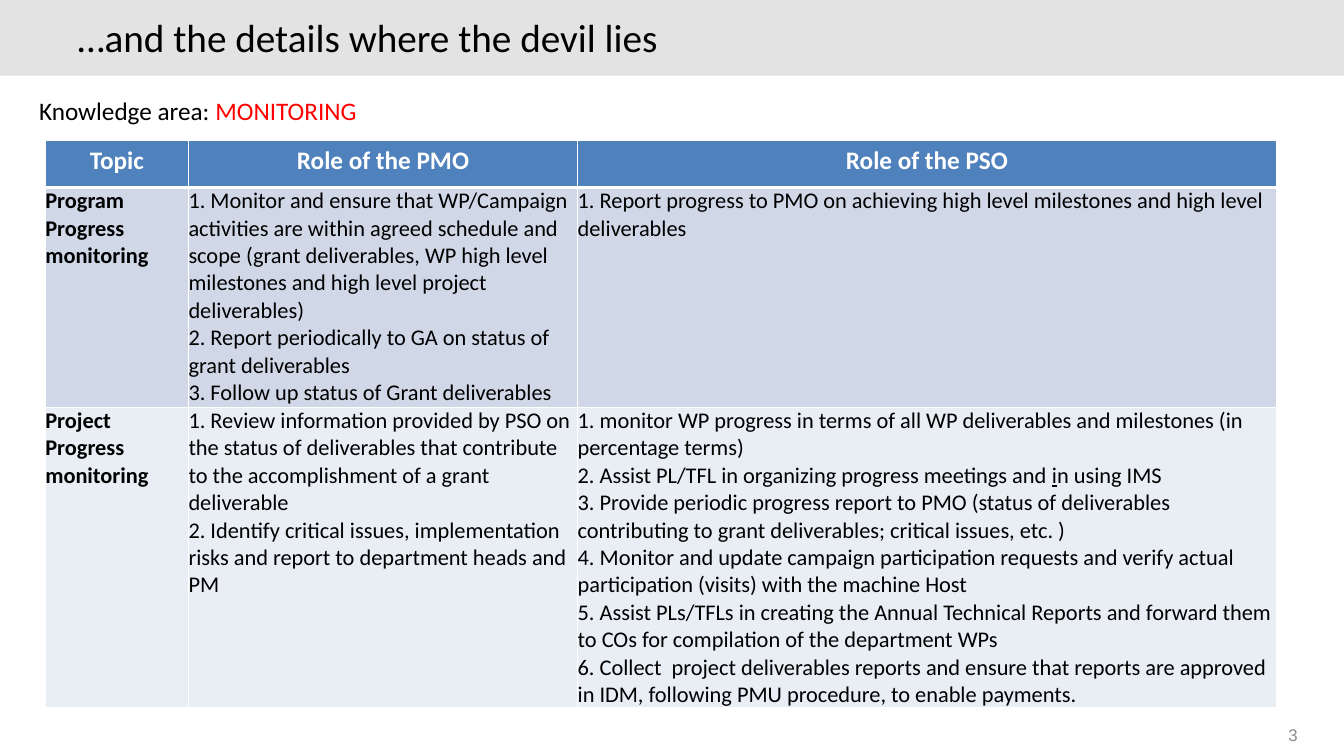
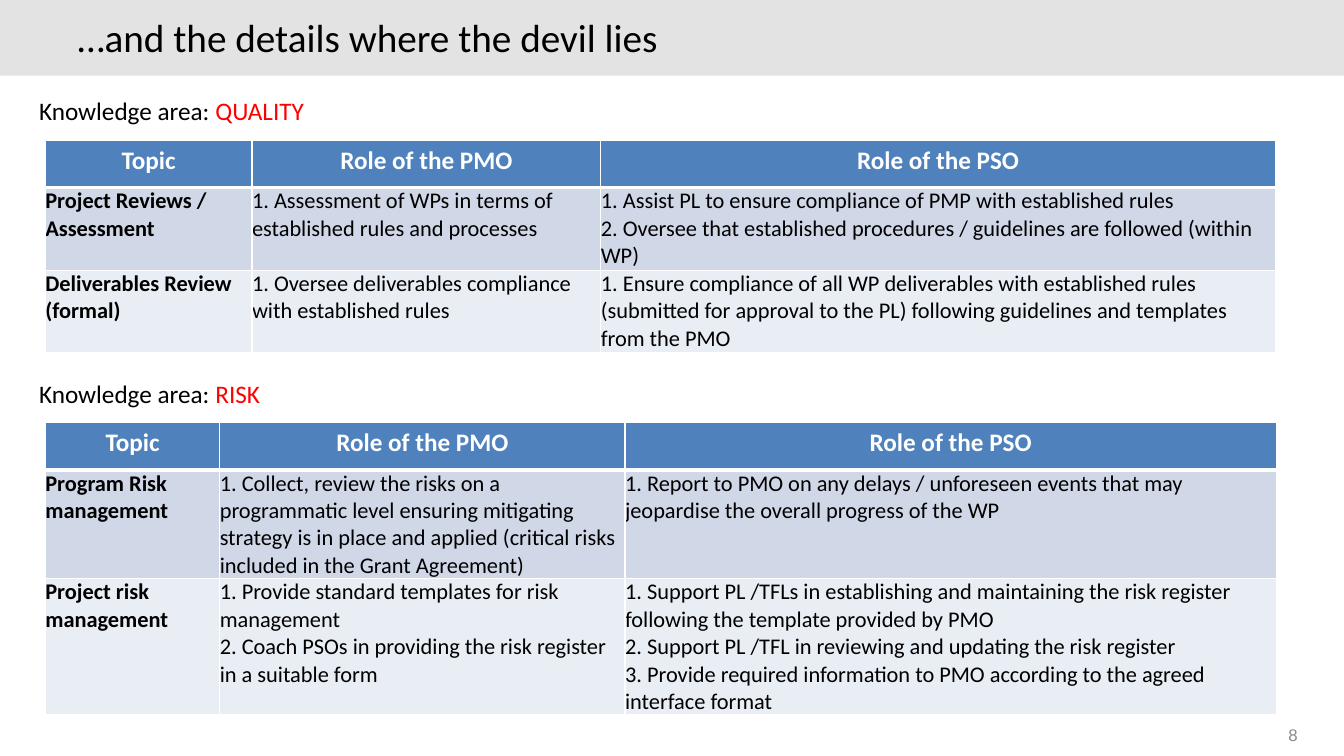
from lxml import etree
from pptx import Presentation
from pptx.dml.color import RGBColor
from pptx.enum import shapes, text
from pptx.oxml import ns
from pptx.util import Inches, Pt

BLACK = RGBColor(0x00, 0x00, 0x00)
WHITE = RGBColor(0xFF, 0xFF, 0xFF)
RED = RGBColor(0xFF, 0x00, 0x00)
NUMBER_GREY = RGBColor(0x8C, 0x8C, 0x8C)
BAND_GREY = RGBColor(0xE3, 0xE3, 0xE3)
HEADER_BLUE = RGBColor(0x4F, 0x81, 0xBD)
ROW_FILLS = (RGBColor(0xD0, 0xD8, 0xE8), RGBColor(0xE9, 0xED, 0xF4))

SLIDE_WIDTH = Inches(13.33)
TITLE = "…and the details where the devil lies"
HEADINGS = ("Topic", "Role of the PMO", "Role of the PSO")
HEADER_HEIGHT = 0.47
THIN, THICK = 1, 3

# Each topic row: row height, topic, PMO duties, PSO duties.
# Letters between underscores are underlined.
MONITORING = [
    (2.18, "Program Progress monitoring",
     ["Monitor and ensure that WP/Campaign activities are within agreed schedule and scope "
      "(grant deliverables, WP high level milestones and high level project deliverables)",
      "Report periodically to GA on status of grant deliverables",
      "Follow up status of Grant deliverables"],
     ["Report progress to PMO on achieving high level milestones and high level deliverables"]),
    (2.98, "Project Progress monitoring",
     ["Review information provided by PSO on the status of deliverables that contribute "
      "to the accomplishment of a grant deliverable",
      "Identify critical issues, implementation risks and report to department heads and PM"],
     ["monitor WP progress in terms of all WP deliverables and milestones (in percentage terms)",
      "Assist PL/TFL in organizing progress meetings and _i_n using IMS",
      "Provide periodic progress report to PMO (status of deliverables contributing "
      "to grant deliverables; critical issues, etc. )",
      "Monitor and update campaign participation requests and verify actual participation "
      "(visits) with the machine Host",
      "Assist PLs/TFLs in creating the Annual Technical Reports and forward them to COs "
      "for compilation of the department WPs",
      "Collect  project deliverables reports and ensure that reports are approved in IDM, "
      "following PMU procedure, to enable payments."]),
]
QUALITY = [
    (0.82, "Project Reviews / Assessment",
     ["Assessment of WPs in terms of established rules and processes"],
     ["Assist PL to ensure compliance of PMP with established rules",
      "Oversee that established procedures / guidelines are followed (within WP)"]),
    (0.82, "Deliverables Review (formal)",
     ["Oversee deliverables compliance with established rules"],
     ["Ensure compliance of all WP deliverables with established rules (submitted for approval "
      "to the PL) following guidelines and templates from the PMO"]),
]
RISK = [
    (1.08, "Program Risk management",
     ["Collect, review the risks on a programmatic level ensuring mitigating strategy is in "
      "place and applied (critical risks included in the Grant Agreement)"],
     ["Report to PMO on any delays / unforeseen events that may jeopardise the overall "
      "progress of the WP"]),
    (1.35, "Project risk management",
     ["Provide standard templates for risk management",
      "Coach PSOs in providing the risk register in a suitable form"],
     ["Support PL /TFLs in establishing and maintaining the risk register following the "
      "template provided by PMO",
      "Support PL /TFL in reviewing and updating the risk register",
      "Provide required information to PMO according to the agreed interface format"]),
]


def style(font, size, color, bold=False, name="Calibri"):
    font.name = name
    font.size = Pt(size)
    font.bold = bold
    font.color.rgb = color


def prepare_layout(prs):
    """Give the title-only layout its grey band and title position."""
    layout = prs.slide_layouts[5]
    title = layout.placeholders[0]
    title.left, title.top = Inches(0.67), Inches(0.13)
    title.width, title.height = Inches(11), Inches(0.5)
    return layout


def move_band_to_layout(slide, layout):
    """Draw the band on a slide, then hand it to the layout as its rearmost shape."""
    band = slide.shapes.add_shape(shapes.MSO_SHAPE.RECTANGLE, 0, 0, SLIDE_WIDTH, Inches(0.75))
    band.shadow.inherit = False
    band.fill.solid()
    band.fill.fore_color.rgb = BAND_GREY
    band.line.fill.background()
    layout.shapes.element.insert(2, band.element)


def add_slide(prs, layout, number):
    slide = prs.slides.add_slide(layout)
    title_frame = slide.shapes.title.text_frame
    title_frame.text = TITLE
    title_frame.vertical_anchor = text.MSO_ANCHOR.MIDDLE
    heading = title_frame.paragraphs[0]
    heading.alignment = text.PP_ALIGN.LEFT
    heading.line_spacing = Pt(32)
    style(heading.runs[0].font, 28, BLACK)

    page = slide.shapes.add_textbox(Inches(12.18), Inches(7.14), Inches(0.79), Inches(0.22))
    page.text_frame.text = str(number)
    page_number = page.text_frame.paragraphs[0]
    page_number.alignment = text.PP_ALIGN.RIGHT
    style(page_number.runs[0].font, 12, NUMBER_GREY, name="Arial")
    return slide


def set_borders(cell, top=THIN, bottom=THIN):
    widths = {"lnL": THIN, "lnR": THIN, "lnT": top, "lnB": bottom}
    properties = cell._tc.get_or_add_tcPr()
    for side, width in widths.items():
        line = etree.SubElement(properties, ns.qn(f"a:{side}"), w=str(Pt(width)))
        fill = etree.SubElement(line, ns.qn("a:solidFill"))
        etree.SubElement(fill, ns.qn("a:srgbClr"), val=str(WHITE))


def set_fill(cell, color):
    cell.fill.solid()
    cell.fill.fore_color.rgb = color


def fill_header(cell, heading):
    set_borders(cell, bottom=THICK)
    set_fill(cell, HEADER_BLUE)
    cell.text_frame.text = heading
    paragraph = cell.text_frame.paragraphs[0]
    paragraph.alignment = text.PP_ALIGN.CENTER
    style(paragraph.runs[0].font, 18, WHITE, bold=True)


def fill_body(cell, lines, color, top, bold):
    set_borders(cell, top=top)
    set_fill(cell, color)
    cell.margin_left = cell.margin_right = cell.margin_top = cell.margin_bottom = 0
    frame = cell.text_frame
    for index, line in enumerate(lines):
        paragraph = frame.add_paragraph() if index else frame.paragraphs[0]
        for part, words in enumerate(line.split("_")):
            run = paragraph.add_run()
            run.text = words
            style(run.font, 16, BLACK, bold)
            if part % 2:
                run.font.underline = True


def numbered(duties):
    return [f"{number}. {duty}" for number, duty in enumerate(duties, 1)]


def add_knowledge_area(slide, top, area, column_widths, topics):
    """Add the area's label and, below it, its table of roles."""
    label = slide.shapes.add_textbox(Inches(0.29), Inches(top), Inches(4.17), Inches(0.4))
    label.text_frame.word_wrap = True
    paragraph = label.text_frame.paragraphs[0]
    for words, color in (("Knowledge area: ", BLACK), (area, RED)):
        run = paragraph.add_run()
        run.text = words
        style(run.font, 18, color)

    heights = [HEADER_HEIGHT] + [topic[0] for topic in topics]
    roles = slide.shapes.add_table(
        len(heights), len(HEADINGS), Inches(0.45), Inches(top + 0.49),
        Inches(sum(column_widths)), Inches(sum(heights))).table
    for column, width in zip(roles.columns, column_widths):
        column.width = Inches(width)
    for row, height in zip(roles.rows, heights):
        row.height = Inches(height)

    for column, heading in enumerate(HEADINGS):
        fill_header(roles.cell(0, column), heading)
    for row, (_, topic, pmo, pso) in enumerate(topics, 1):
        color = ROW_FILLS[(row - 1) % 2]
        border = THICK if row == 1 else THIN
        for column, lines in enumerate(([topic], numbered(pmo), numbered(pso))):
            fill_body(roles.cell(row, column), lines, color, border, bold=column == 0)


def main():
    prs = Presentation()
    prs.slide_width, prs.slide_height = SLIDE_WIDTH, Inches(7.5)
    layout = prepare_layout(prs)

    monitoring = add_slide(prs, layout, 3)
    move_band_to_layout(monitoring, layout)
    add_knowledge_area(monitoring, 0.9, "MONITORING", (1.42, 3.86, 6.93), MONITORING)

    quality_and_risk = add_slide(prs, layout, 8)
    add_knowledge_area(quality_and_risk, 0.9, "QUALITY", (2.05, 3.46, 6.69), QUALITY)
    add_knowledge_area(quality_and_risk, 3.7, "RISK", (1.73, 4.02, 6.46), RISK)

    prs.save("out.pptx")


if __name__ == "__main__":
    main()
